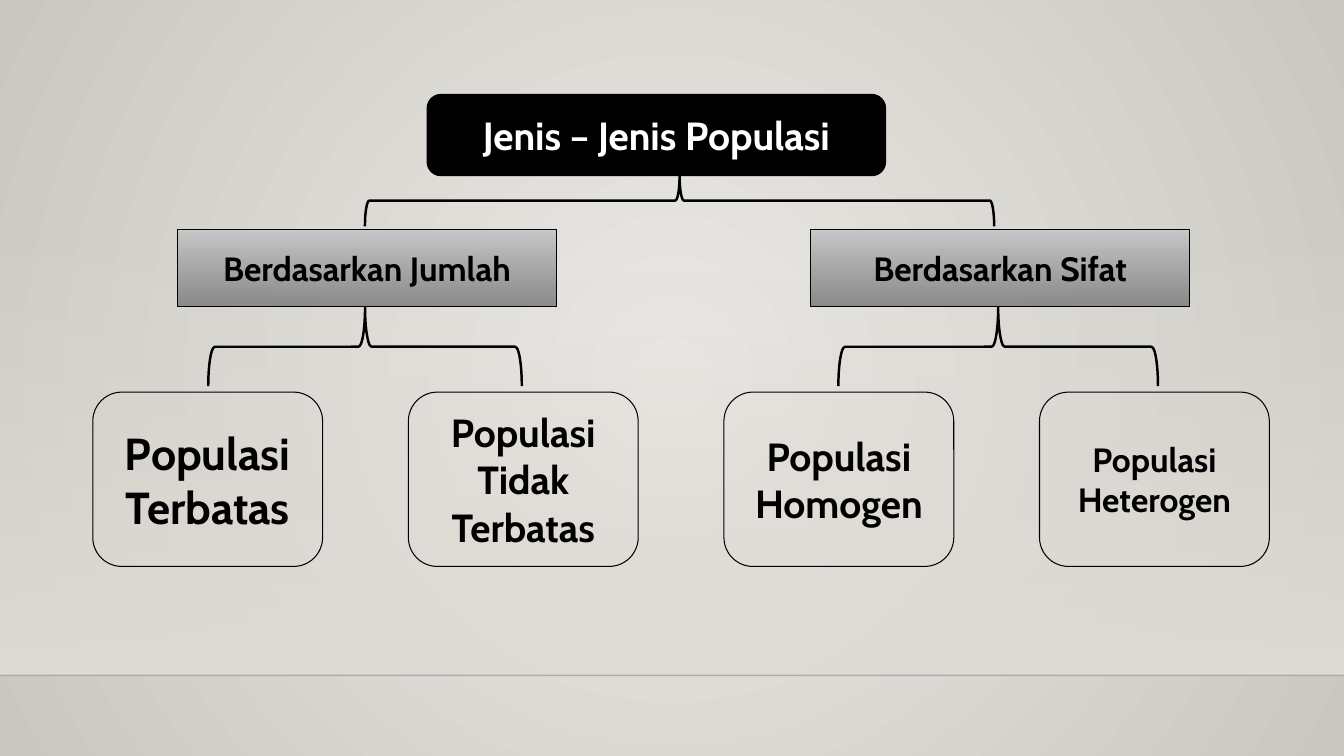
from lxml.etree import SubElement
from pptx import Presentation
from pptx.dml.color import RGBColor
from pptx.enum.shapes import MSO_CONNECTOR, MSO_SHAPE
from pptx.enum.text import MSO_ANCHOR, PP_ALIGN
from pptx.oxml.ns import qn
from pptx.util import Inches, Pt

COLORS = {
    "glow": "ECEAE7", "edge": "CAC7C1", "wall": "DFDBD5", "floor": "000001",
    "ink": "000000", "white": "FFFFFF", "silver": "C8C8C8", "steel": "848484",
}
RGB = {name: RGBColor.from_string(value) for name, value in COLORS.items()}
WIDTH, HEIGHT = 13.33, 7.5
FLOOR_TOP = 6.7
LEAF_LEFT, LEAF_PITCH = 0.92, 3.13
BRANCH_LEFT, BRANCH_PITCH = 1.76, 6.28


def add_node(kind, left, top, width, height, outline, text="", size=24, ink="ink"):
    node = slide.shapes.add_shape(
        kind, Inches(left), Inches(top), Inches(width), Inches(height))
    node.shadow.inherit = False
    node.fill.background()
    node.line.color.rgb = RGB["ink"]
    node.line.width = Pt(outline)
    if text:
        node.text_frame.word_wrap = True
        node.text_frame.vertical_anchor = MSO_ANCHOR.MIDDLE
        paragraph = node.text_frame.paragraphs[0]
        paragraph.alignment = PP_ALIGN.CENTER
        run = paragraph.add_run()
        run.text = text
        run.font.name = "Cabin"
        run.font.size = Pt(size)
        run.font.bold = True
        run.font.color.rgb = RGB[ink]
    return node


def shade(fill, start, end):
    fill.gradient()
    for stop, name in zip(fill.gradient_stops, (start, end)):
        stop.color.rgb = RGB[name]


deck = Presentation()
deck.slide_width, deck.slide_height = Inches(WIDTH), Inches(HEIGHT)
slide = deck.slides.add_slide(deck.slide_layouts[6])

shade(slide.background.fill, "glow", "edge")
radial = slide.element.find(".//" + qn("a:gradFill"))
radial.remove(radial.find(qn("a:lin")))
circle = SubElement(radial, qn("a:path"), path="circle")
SubElement(circle, qn("a:fillToRect"), l="50000", t="50000", r="50000", b="50000")

wall = add_node(MSO_SHAPE.RECTANGLE, 0, 2.21, WIDTH, FLOOR_TOP - 2.21, 1)
wall.line.fill.background()
shade(wall.fill, "wall", "wall")
wall.fill.gradient_angle = 270
SubElement(wall.element.find(".//" + qn("a:srgbClr")), qn("a:alpha"), val="0")

floor = slide.shapes.add_connector(
    MSO_CONNECTOR.STRAIGHT, 0, Inches(FLOOR_TOP), Inches(WIDTH), Inches(FLOOR_TOP))
floor.line.color.rgb = RGB["floor"]
floor.line.width = Pt(1)
SubElement(floor.element.find(".//" + qn("a:srgbClr")), qn("a:alpha"), val="20000")
SubElement(floor.element.spPr, qn("a:effectLst"))

title = add_node(MSO_SHAPE.ROUNDED_RECTANGLE, 4.24, 0.94, 4.54, 0.8, 1.25,
                 "Jenis – Jenis Populasi", 28, "white")
title.fill.solid()
title.fill.fore_color.rgb = RGB["ink"]

for column, text in enumerate(("Berdasarkan Jumlah", "Berdasarkan Sifat")):
    branch = add_node(MSO_SHAPE.RECTANGLE, BRANCH_LEFT + column * BRANCH_PITCH, 2.28,
                      3.76, 0.76, 0.75, text)
    shade(branch.fill, "silver", "steel")
    branch.fill.gradient_angle = 270
    last_stop = branch.element.findall(".//" + qn("a:gs"))[-1]
    SubElement(last_stop[0], qn("a:alpha"), val="92000")

for center, middle, depth, span in (
    (6.74, 1.99, 0.51, 6.24),
    (3.62, 3.44, 0.78, 3.11),
    (9.9, 3.44, 0.78, 3.17),
):
    brace = add_node(MSO_SHAPE.LEFT_BRACE, center - depth / 2, middle - span / 2,
                     depth, span, 1.75)
    brace.rotation = 90

for column, (text, size) in enumerate((
    ("Populasi Terbatas", 32),
    ("Populasi Tidak Terbatas", 28),
    ("Populasi Homogen", 28),
    ("Populasi Heterogen", 24),
)):
    add_node(MSO_SHAPE.ROUNDED_RECTANGLE, LEAF_LEFT + column * LEAF_PITCH, 3.89,
             2.28, 1.73, 0.75, text, size)

deck.save("out.pptx")
